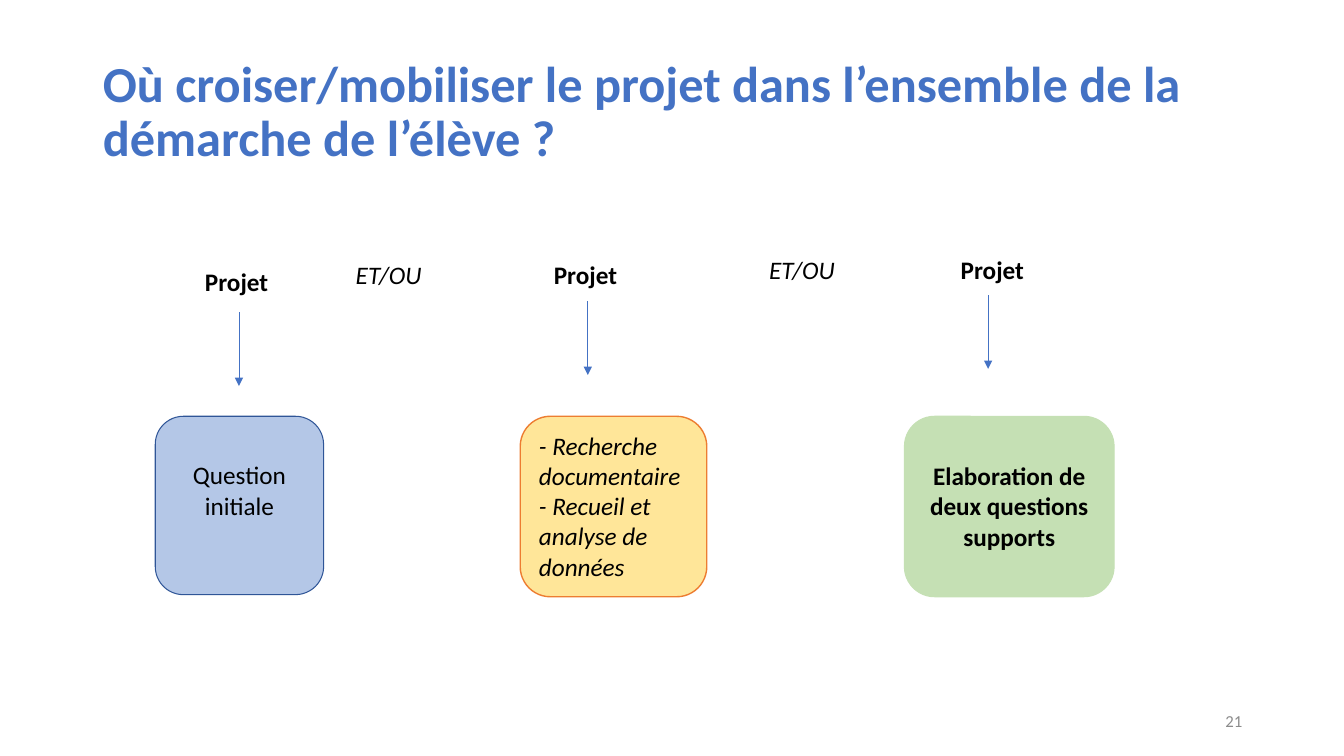
from lxml import etree
from pptx import Presentation
from pptx.dml.color import RGBColor
from pptx.enum.shapes import MSO_CONNECTOR, MSO_SHAPE
from pptx.enum.text import MSO_ANCHOR, MSO_AUTO_SIZE, PP_ALIGN
from pptx.oxml.ns import qn
from pptx.util import Inches, Pt

LEFT, CENTER, RIGHT = PP_ALIGN.LEFT, PP_ALIGN.CENTER, PP_ALIGN.RIGHT
TOP, MIDDLE = MSO_ANCHOR.TOP, MSO_ANCHOR.MIDDLE
ROUNDED, STRAIGHT = MSO_SHAPE.ROUNDED_RECTANGLE, MSO_CONNECTOR.STRAIGHT
NO_FIT = MSO_AUTO_SIZE.NONE
TITLE_ONLY = 5

BLACK = RGBColor(0x00, 0x00, 0x00)
GREY = RGBColor(0x8C, 0x8C, 0x8C)
BLUE = RGBColor(0x44, 0x72, 0xC4)
DARK_BLUE = RGBColor(0x2F, 0x55, 0x97)
LIGHT_BLUE = RGBColor(0xB4, 0xC7, 0xE7)
YELLOW = RGBColor(0xFF, 0xE6, 0x99)
ORANGE = RGBColor(0xED, 0x7D, 0x31)
GREEN = RGBColor(0xC5, 0xE0, 0xB4)


def write(tf, text, size=18, color=BLACK, bold=False, italic=False,
          align=LEFT, anchor=TOP, spacing=1.0, top=0.05):
    """Fill a text frame, one paragraph per line of text."""
    tf.word_wrap = True
    tf.auto_size = NO_FIT
    tf.vertical_anchor = anchor
    tf.margin_left = tf.margin_right = Inches(0.1)
    tf.margin_top, tf.margin_bottom = Inches(top), Inches(0.05)
    for i, line in enumerate(text.split("\n")):
        p = tf.add_paragraph() if i else tf.paragraphs[0]
        p.alignment, p.line_spacing = align, spacing
        r = p.add_run()
        r.text = line
        font = r.font
        font.name, font.size = "Calibri", Pt(size)
        font.bold, font.italic = bold, italic
        font.color.rgb = color


class SlideBuilder:
    def __init__(self, prs):
        self.s = prs.slides.add_slide(prs.slide_layouts[TITLE_ONLY])

    def title(self, text, x, y, w, h):
        sp = self.s.shapes.title
        sp.left, sp.top, sp.width, sp.height = map(Inches, (x, y, w, h))
        write(sp.text_frame, text, size=36, color=BLUE, bold=True,
              anchor=MIDDLE, spacing=0.9)

    def label(self, text, x, y, w, h=0.4, **style):
        sp = self.s.shapes.add_textbox(*map(Inches, (x, y, w, h)))
        write(sp.text_frame, text, **style)

    def box(self, text, x, y, w, h, fill, line, weight, **style):
        sp = self.s.shapes.add_shape(ROUNDED, *map(Inches, (x, y, w, h)))
        sp.shadow.inherit = False
        sp.fill.solid()
        sp.fill.fore_color.rgb = fill
        sp.line.color.rgb = line
        sp.line.width = Pt(weight)
        write(sp.text_frame, text, **style)

    def down_arrow(self, x, y, length):
        sp = self.s.shapes.add_connector(
            STRAIGHT, *map(Inches, (x, y, x, y + length)))
        sp.line.color.rgb = BLUE
        sp.line.width = Pt(0.5)
        ln = sp.line._get_or_add_ln()
        etree.SubElement(ln, qn("a:tailEnd"), type="triangle")
        etree.SubElement(sp._element.spPr, qn("a:effectLst"))


def main():
    prs = Presentation()
    prs.slide_width, prs.slide_height = Inches(13.33), Inches(7.5)
    slide = SlideBuilder(prs)

    # Title and page number
    slide.title("Où croiser/mobiliser le projet dans l’ensemble de la "
                "démarche de l’élève ?", 0.92, 0.4, 11.5, 1.45)
    slide.label("21", 9.42, 6.95, 3, size=12, color=GREY, align=RIGHT,
                anchor=MIDDLE)

    # Steps of the student's work
    one_line_down = 0.35
    steps = [
        ("Question initiale", 1.54, 1.67, 1.77, LIGHT_BLUE, DARK_BLUE, 0.75,
         dict(align=CENTER, top=one_line_down)),
        ("- Recherche documentaire\n- Recueil et analyse de données",
         5.16, 1.85, 1.79, YELLOW, ORANGE, 1, dict(italic=True)),
        ("Elaboration de deux questions supports",
         8.97, 2.08, 1.79, GREEN, GREEN, 0.75,
         dict(bold=True, align=CENTER, top=one_line_down)),
    ]
    for text, x, w, h, fill, line, weight, style in steps:
        slide.box(text, x, 4.13, w, h, fill, line, weight, **style)

    # Project labels, each with its arrow
    for text, x, y, align, arrow_x, arrow_y in [
            ("Projet ", 1.54, 2.59, CENTER, 2.37, 3.1),
            ("Projet ", 5, 2.52, CENTER, 5.83, 2.99),
            ("Projet", 9.43, 2.47, LEFT, 9.8, 2.93)]:
        slide.label(text, x, y, 1.67, bold=True, align=align)
        slide.down_arrow(arrow_x, arrow_y, 0.73)

    # Alternatives between the projects
    for x, y in [(3.43, 2.52), (7.53, 2.47)]:
        slide.label("ET/OU", x, y, 1.02, italic=True)

    prs.save("out.pptx")


if __name__ == "__main__":
    main()
